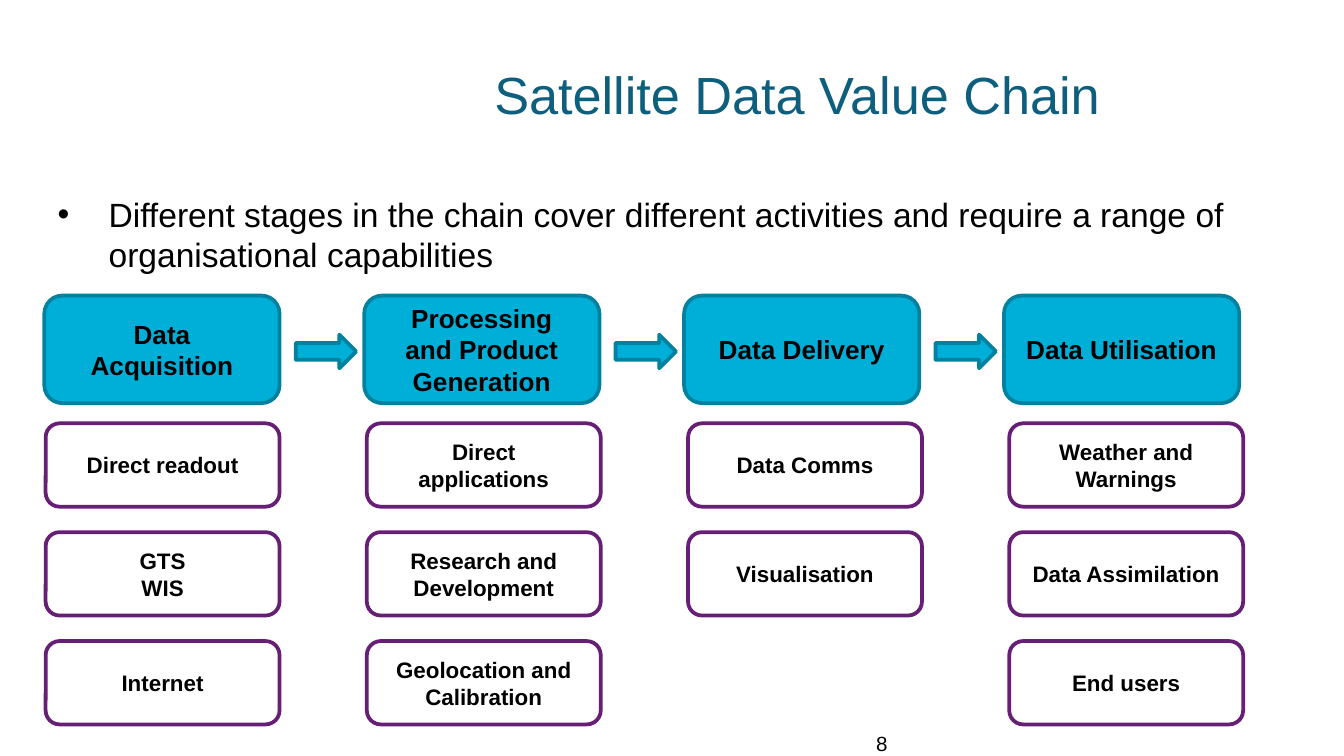
from collections import namedtuple

from lxml.etree import SubElement
from pptx import Presentation
from pptx.dml.color import RGBColor
from pptx.enum.shapes import MSO_SHAPE as Preset
from pptx.enum.text import MSO_ANCHOR as Anchor, PP_ALIGN as Align
from pptx.oxml.ns import qn
from pptx.util import Inches, Pt

COLOURS = {
    "title": "0E5F7E",
    "text": "000000",
    "stage": "00AFD7",
    "stage edge": "00819F",
    "activity": "FFFFFF",
    "activity edge": "671E75",
}
CHAIN = [
    ("Data Acquisition", ["Direct readout", "GTS\nWIS", "Internet"]),
    ("Processing\nand Product Generation",
     ["Direct applications", "Research and Development", "Geolocation and\nCalibration"]),
    ("Data Delivery", ["Data Comms", "Visualisation"]),
    ("Data Utilisation", ["Weather and Warnings", "Data Assimilation", "End users"]),
]

Box = namedtuple("Box", "left top width height")


def cell(box, column, row, pitch, size):
    """Return one cell of a grid that starts at the corner of the box."""
    return Box(box.left + column * pitch[0], box.top + row * pitch[1], *size)


def emu(box):
    """Convert a box in inches to slide units."""
    return [Inches(length) for length in box]


def colour(name):
    """Look up a named colour."""
    return RGBColor.from_string(COLOURS[name])


def write(frame, words, size, ink="text", bold=False, align=Align.LEFT, anchor=Anchor.TOP):
    """Fill a text frame with one formatted paragraph."""
    frame.word_wrap = True
    frame.vertical_anchor = anchor
    paragraph = frame.paragraphs[0]
    paragraph.text = words
    paragraph.alignment = align
    font = paragraph.font
    font.name, font.size, font.bold = "Arial", Pt(size), bold
    font.color.rgb = colour(ink)


def add_block(slide, preset, box, role, words="", size=14):
    """Add an outlined shape, with a centred bold label if words are given."""
    block = slide.shapes.add_shape(preset, *emu(box))
    block.shadow.inherit = False
    block.fill.solid()
    block.fill.fore_color.rgb = colour(role)
    block.line.color.rgb = colour(role + " edge")
    block.line.width = Pt(2)
    if words:
        write(block.text_frame, words, size, bold=True, align=Align.CENTER, anchor=Anchor.MIDDLE)


def add_title(slide, box, words):
    """Place and format the title placeholder."""
    title = slide.shapes.title
    title.left, title.top, title.width, title.height = emu(box)
    write(title.text_frame, words, 28, "title", align=Align.CENTER, anchor=Anchor.MIDDLE)


def add_summary(slide, box, words):
    """Add the bulleted statement above the chain."""
    frame = slide.shapes.add_textbox(*emu(box)).text_frame
    properties = frame.paragraphs[0]._p.get_or_add_pPr()
    properties.set("marL", str(Inches(0.38)))
    properties.set("indent", str(-Inches(0.38)))
    SubElement(properties, qn("a:buFont"), typeface="Arial")
    SubElement(properties, qn("a:buChar"), char="•")
    write(frame, words, 18)


def add_stages(slide, box):
    """Add the row of stages with an arrow in each gap."""
    pitch = (2.38, 0)
    arrows = Box(box.left + 1.87, box.top + 0.29, box.width, box.height)
    for column, (stage, _) in enumerate(CHAIN):
        add_block(slide, Preset.ROUNDED_RECTANGLE,
                  cell(box, column, 0, pitch, (1.75, box.height)), "stage", stage)
        if column < len(CHAIN) - 1:
            add_block(slide, Preset.RIGHT_ARROW,
                      cell(arrows, column, 0, pitch, (0.45, 0.25)), "stage")


def add_activities(slide, box):
    """Add the grid of activities, one column for each stage."""
    for column, (_, activities) in enumerate(CHAIN):
        for row, activity in enumerate(activities):
            add_block(slide, Preset.ROUNDED_RECTANGLE,
                      cell(box, column, row, (2.39, 0.81), (1.74, 0.62)),
                      "activity", activity, 12)


def add_page_number(slide, box, number):
    """Add the page number at the foot of the slide."""
    write(slide.shapes.add_textbox(*emu(box)).text_frame, number, 11)


def main():
    """Build and save the slide."""
    deck = Presentation()
    deck.slide_width = Inches(10)
    deck.slide_height = deck.slide_width * 9 // 16
    slide = deck.slides.add_slide(deck.slide_layouts[5])
    add_title(slide, Box(2.36, 0.23, 7.14, 0.94), "Satellite Data Value Chain")
    add_page_number(slide, Box(6.42, 5.39, 1.26, 0.18), "8")
    add_stages(slide, Box(0.33, 2.2, 8.91, 0.8))
    add_summary(slide, Box(0.33, 1.39, 9.33, 0.71),
                "Different stages in the chain cover different activities "
                "and require a range of organisational capabilities")
    add_activities(slide, Box(0.34, 3.15, 8.91, 2.25))
    deck.save("out.pptx")


if __name__ == "__main__":
    main()
